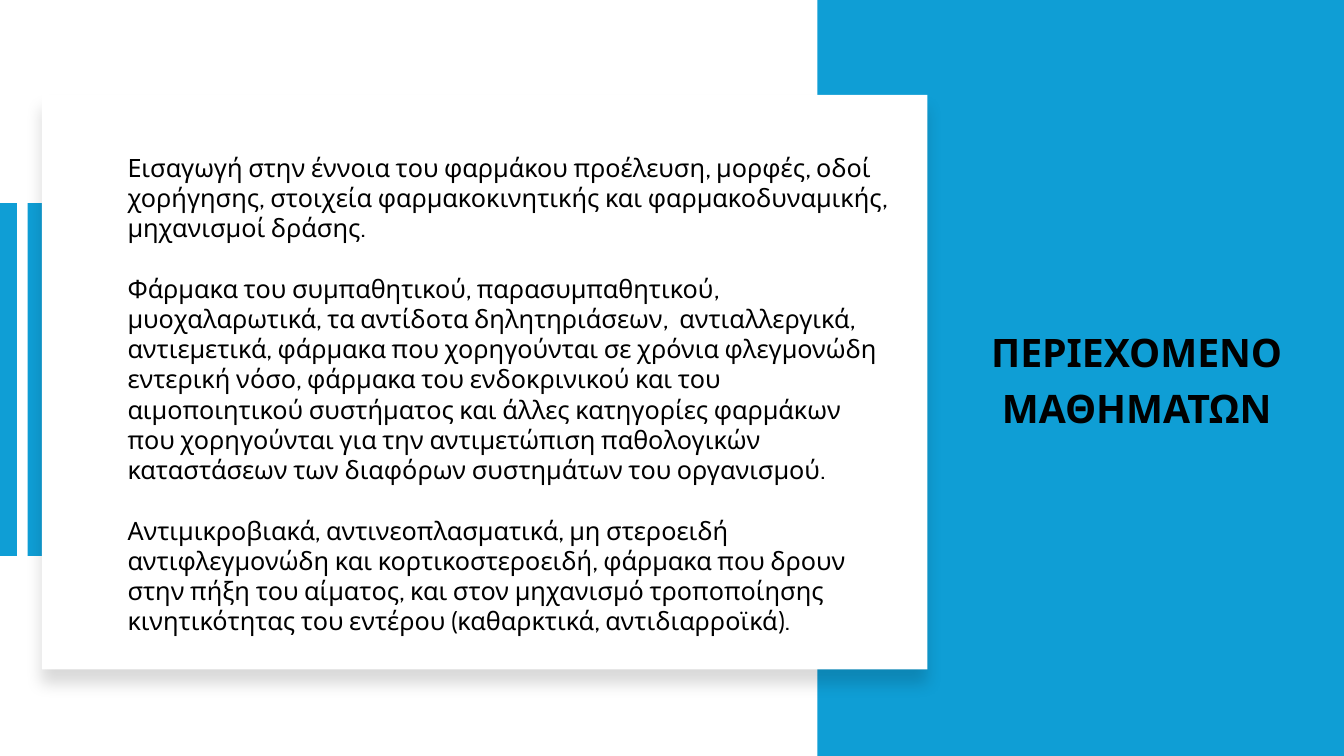
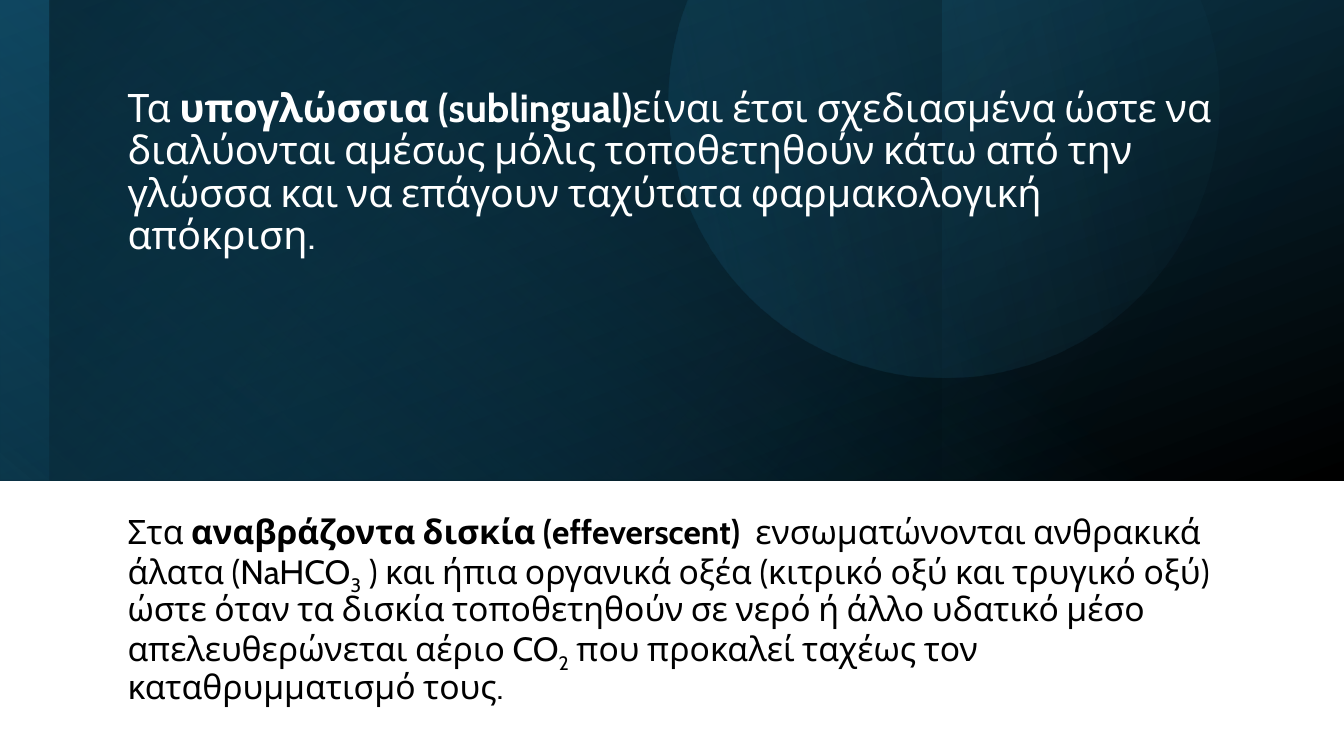
import math
from dataclasses import dataclass

import lxml.etree
import pptx
import pptx.dml.color
import pptx.enum.dml
import pptx.enum.shapes
import pptx.enum.text
import pptx.oxml.ns
import pptx.util

ANCHOR = pptx.enum.text.MSO_ANCHOR
ALIGN = pptx.enum.text.PP_ALIGN
RECTANGLE = pptx.enum.shapes.MSO_SHAPE.RECTANGLE


@dataclass(frozen=True)
class Theme:
    font: str = "Cabin"
    accent: str = "0F9ED5"
    paper: str = "FFFFFF"
    ink: str = "000000"
    teal: str = "156082"
    deep_teal: str = "104862"
    night: str = "0B3041"
    sky: str = "46B1E1"
    small: int = 18
    medium: int = 24
    large: int = 28
    tight: float = 0.9


THEME = Theme()


def rgb(value):
    return pptx.dml.color.RGBColor.from_string(value)


def add_node(parent, tag, **attributes):
    node = lxml.etree.SubElement(parent, pptx.oxml.ns.qn(tag))
    for name, value in attributes.items():
        node.set(name, str(value))
    return node


def apply_format(target, values):
    for name, value in values.items():
        setattr(target, name, value)


class SlideBuilder:
    """Draws on the current page; lengths are columns and rows of an 80 by 45 grid."""

    COLUMNS, ROWS = 80, 45

    def __init__(self, theme):
        self.theme = theme
        self.deck = pptx.Presentation()
        self.deck.slide_width = pptx.util.Inches(13.33)
        self.deck.slide_height = pptx.util.Inches(7.5)
        self.page = None

    def new_page(self):
        self.page = self.deck.slides.add_slide(self.deck.slide_layouts[6])
        fill = self.page.background.fill
        fill.solid()
        fill.fore_color.rgb = rgb(self.theme.paper)

    def across(self, columns):
        return round(self.deck.slide_width * columns / self.COLUMNS)

    def down(self, rows):
        return round(self.deck.slide_height * rows / self.ROWS)

    def frame(self, left, top, width, height):
        return self.across(left), self.down(top), self.across(width), self.down(height)

    def panel(self, area, color=None):
        shape = self.page.shapes.add_shape(RECTANGLE, *self.frame(*area))
        shape.shadow.inherit = False
        shape.line.fill.background()
        if color:
            shape.fill.solid()
            shape.fill.fore_color.rgb = rgb(color)
        return shape

    def card(self, area):
        """White panel with a soft shadow below it."""
        shape = self.panel(area, self.theme.paper)
        effects = shape.element.spPr.find(pptx.oxml.ns.qn("a:effectLst"))
        shadow = add_node(effects, "a:outerShdw", blurRad=pptx.util.Pt(11),
                          dist=pptx.util.Pt(10), dir=90 * 60000, rotWithShape=0)
        tint = add_node(shadow, "a:srgbClr", val=self.theme.ink)
        add_node(tint, "a:alpha", val=15000)

    def shade(self, shape, angle, stops):
        """Two-stop gradient; angle is clockwise, a stop is (percent, colour, opacity)."""
        shape.fill.gradient()
        shape.fill.gradient_angle = (360 - angle) % 360
        for stop, (percent, color, opacity) in zip(shape.fill.gradient_stops, stops):
            stop.position = percent / 100
            stop.color.rgb = rgb(color)
        tints = shape.element.spPr.iter(pptx.oxml.ns.qn("a:srgbClr"))
        for tint, (percent, color, opacity) in zip(list(tints), stops):
            add_node(tint, "a:alpha", val=opacity * 1000)

    def hanging_disc(self, center_x, center_y, radius):
        """Disc cut off along the top edge of the page."""
        start = -math.asin(center_y / radius)
        sweep = math.pi - 2 * start
        steps = 120
        angles = [start + sweep * step / steps for step in range(steps + 1)]
        points = [(self.across(center_x + radius * math.cos(angle)),
                   self.down(center_y + radius * math.sin(angle))) for angle in angles]
        outline = self.page.shapes.build_freeform(*points[0])
        outline.add_line_segments(points[1:], close=True)
        shape = outline.convert_to_shape()
        shape.shadow.inherit = False
        shape.line.fill.background()
        return shape

    def text(self, area, paragraphs, size, color, anchor=ANCHOR.MIDDLE, bold=False, **layout):
        """Each paragraph is a list of (text, font changes) pairs."""
        box = self.page.shapes.add_textbox(*self.frame(*area))
        apply_format(box.text_frame, {"word_wrap": True, "vertical_anchor": anchor})
        gap = layout.pop("gap", 0)
        for index, spans in enumerate(paragraphs):
            para = box.text_frame.paragraphs[0] if index == 0 else box.text_frame.add_paragraph()
            apply_format(para, layout)
            if index:
                para.space_before = pptx.util.Pt(gap)
            for words, changes in spans:
                span = para.add_run()
                span.text = words
                span.font.color.rgb = rgb(color)
                look = {"name": self.theme.font, "size": pptx.util.Pt(size), "bold": bold}
                apply_format(span.font, look | changes.get("font", {}))
                if "baseline" in changes:
                    properties = span.font._element
                    properties.set("baseline", str(changes["baseline"] * 1000))


PLAIN = {}
BOLD = {"font": {"bold": True}}
SUBSCRIPT = {"baseline": -25}

COURSE_TOPICS = [
    "Εισαγωγή στην έννοια του φαρμάκου προέλευση, μορφές, οδοί χορήγησης, στοιχεία "
    "φαρμακοκινητικής και φαρμακοδυναμικής, μηχανισμοί δράσης.",
    "Φάρμακα του συμπαθητικού, παρασυμπαθητικού, μυοχαλαρωτικά, τα αντίδοτα "
    "δηλητηριάσεων,  αντιαλλεργικά, αντιεμετικά, φάρμακα που χορηγούνται σε χρόνια "
    "φλεγμονώδη εντερική νόσο, φάρμακα του ενδοκρινικού και του αιμοποιητικού "
    "συστήματος και άλλες κατηγορίες φαρμάκων που χορηγούνται για την αντιμετώπιση "
    "παθολογικών καταστάσεων των διαφόρων συστημάτων του οργανισμού.",
    "Αντιμικροβιακά, αντινεοπλασματικά, μη στεροειδή αντιφλεγμονώδη και "
    "κορτικοστεροειδή, φάρμακα που δρουν στην πήξη του αίματος, και στον μηχανισμό "
    "τροποποίησης κινητικότητας του εντέρου (καθαρκτικά, αντιδιαρροϊκά).",
]

SUBLINGUAL = [
    ("Τα ", PLAIN),
    ("υπογλώσσια (sublingual)", BOLD),
    ("είναι έτσι σχεδιασμένα ώστε να διαλύονται αμέσως μόλις τοποθετηθούν κάτω από "
     "την γλώσσα και να επάγουν ταχύτατα φαρμακολογική απόκριση.", PLAIN),
]

EFFERVESCENT = [
    ("Στα ", PLAIN),
    ("αναβράζοντα δισκία (effeverscent)  ", BOLD),
    ("ενσωματώνονται ανθρακικά άλατα (NaHCO", PLAIN),
    ("3", SUBSCRIPT),
    (" ) και ήπια οργανικά οξέα (κιτρικό οξύ και τρυγικό οξύ) ώστε όταν τα δισκία "
     "τοποθετηθούν σε νερό ή άλλο υδατικό μέσο απελευθερώνεται αέριο CO", PLAIN),
    ("2", SUBSCRIPT),
    (" που προκαλεί ταχέως τον καταθρυμματισμό τους.", PLAIN),
]


def course_content(builder):
    theme = builder.theme
    for left in (0, 1.65):
        builder.panel((left, 12.1, 1, 21), theme.accent)
    builder.panel((48.65, 0, 31.35, 45), theme.accent)
    builder.card((2.5, 5.65, 52.7, 34.2))
    builder.text((7, 7.55, 46.5, 31.8), [[(topic, PLAIN)] for topic in COURSE_TOPICS],
                 theme.small, theme.ink, gap=21.6)
    builder.text((57.8, 12.1, 19.7, 21.4),
                 [[(word, PLAIN)] for word in ("ΠΕΡΙΕΧΟΜΕΝΟ", "ΜΑΘΗΜΑΤΩΝ")],
                 theme.large, theme.ink, bold=True, gap=10,
                 alignment=ALIGN.CENTER, line_spacing=theme.tight)


def tablet_forms(builder):
    theme = builder.theme
    band_height = 28.6
    layers = [
        (0, 80, 70, [(0, theme.deep_teal, 100), (100, theme.ink, 100)]),
        (0, 80, 130, [(40, theme.teal, 0), (100, theme.deep_teal, 52)]),
        (2.95, 77.05, 220, [(17, theme.teal, 0), (100, theme.ink, 37)]),
        (0, 56.05, 310, [(0, theme.night, 0), (100, theme.ink, 25)]),
    ]
    for left, width, angle, stops in layers:
        builder.shade(builder.panel((left, 0, width, band_height)), angle, stops)
    builder.shade(builder.hanging_disc(56.2, 6.05, 16.4), 348.5,
                  [(0, theme.teal, 22), (87, theme.sky, 2)])
    builder.text((7, 2.4, 66, 13.25), [SUBLINGUAL], theme.large, theme.paper,
                 anchor=ANCHOR.BOTTOM, line_spacing=theme.tight)
    builder.text((7, 30.3, 66, 12.1), [EFFERVESCENT], theme.medium, theme.ink,
                 line_spacing=theme.tight)


def main():
    builder = SlideBuilder(THEME)
    for draw in (course_content, tablet_forms):
        builder.new_page()
        draw(builder)
    builder.deck.save("out.pptx")


if __name__ == "__main__":
    main()
